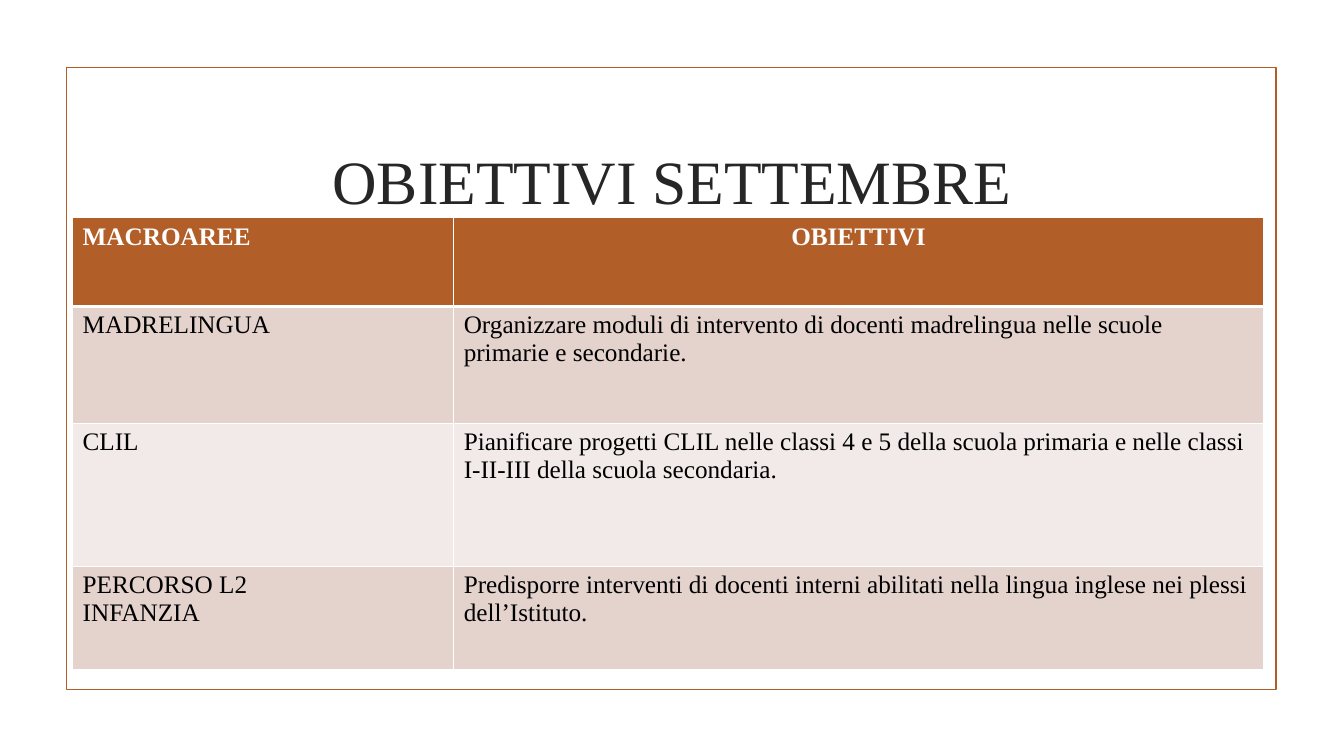
from lxml.etree import SubElement
from pptx import Presentation
from pptx.dml.color import RGBColor
from pptx.enum.shapes import MSO_SHAPE
from pptx.enum.text import MSO_ANCHOR, MSO_AUTO_SIZE, PP_ALIGN
from pptx.oxml.ns import qn
from pptx.util import Inches, Pt

COLOURS = {
    "accent": "B15E28",
    "title": "262626",
    "white": "FFFFFF",
    "black": "000000",
    "dark_band": "E4D2CD",
    "light_band": "F2EAE8",
}
FONT = "Times New Roman"
COLUMN_WIDTHS = [3.78, 8.03]
ROW_HEIGHTS = [0.88, 1.16, 1.42, 1.02]
ROWS = [
    ("MACROAREE", "OBIETTIVI"),
    ("MADRELINGUA",
     "Organizzare moduli di intervento di docenti madrelingua nelle scuole primarie e secondarie."),
    ("CLIL",
     "Pianificare progetti CLIL nelle classi 4 e 5 della scuola primaria e nelle classi "
     "I-II-III della scuola secondaria."),
    ("PERCORSO L2\nINFANZIA",
     "Predisporre interventi di docenti interni abilitati nella lingua inglese nei plessi dell’Istituto."),
]


def colour(name):
    """Return the named colour."""
    return RGBColor.from_string(COLOURS[name])


def format_text(frame, align, ink, **values):
    """Align every paragraph and apply the font values."""
    for para in frame.paragraphs:
        para.alignment = align
        para.font.color.rgb = colour(ink)
        for key, value in {"name": FONT, **values}.items():
            setattr(para.font, key, value)


def add_frame(page):
    """Draw the outline around the content."""
    frame = page.shapes.add_shape(
        MSO_SHAPE.RECTANGLE, Inches(0.66), Inches(0.67), Inches(12), Inches(6.17))
    frame.shadow.inherit = False
    frame.fill.background()
    frame.line.color.rgb = colour("accent")
    frame.line.width = Pt(1.25)


def set_title(page, text):
    """Place and format the slide title."""
    title = page.shapes.title
    place = {"left": 1.42, "top": 1.07, "width": 10.5, "height": 1.43}
    for key, value in place.items():
        setattr(title, key, Inches(value))
    frame = title.text_frame
    frame.text = text
    frame.word_wrap = True
    frame.auto_size = MSO_AUTO_SIZE.NONE
    frame.vertical_anchor = MSO_ANCHOR.MIDDLE
    format_text(frame, PP_ALIGN.CENTER, "title", size=Pt(44))


def set_borders(cell, widths):
    """Give the cell white borders of the given widths by side."""
    properties = cell._tc.get_or_add_tcPr()
    for side, width in widths.items():
        line = SubElement(properties, qn(f"a:ln{side}"), w=str(Pt(width)))
        fill = SubElement(line, qn("a:solidFill"))
        SubElement(fill, qn("a:srgbClr"), val=COLOURS["white"])


def format_cell(cell, row, column):
    """Style a cell by its row and column."""
    header = row == 0
    set_borders(cell, {"L": 1, "R": 1, "T": 3 if row == 1 else 1, "B": 3 if header else 1})
    band = "accent" if header else "dark_band" if row % 2 else "light_band"
    cell.fill.solid()
    cell.fill.fore_color.rgb = colour(band)
    align = PP_ALIGN.CENTER if header and column else PP_ALIGN.LEFT
    format_text(cell.text_frame, align, "white" if header else "black", size=Pt(18), bold=header)


def add_goals_table(page):
    """Add the table of areas and goals."""
    table = page.shapes.add_table(
        len(ROWS), len(COLUMN_WIDTHS), Inches(0.72), Inches(2.16),
        Inches(sum(COLUMN_WIDTHS)), Inches(sum(ROW_HEIGHTS))).table
    for column, width in zip(table.columns, COLUMN_WIDTHS):
        column.width = Inches(width)
    for row, (height, texts) in enumerate(zip(ROW_HEIGHTS, ROWS)):
        table.rows[row].height = Inches(height)
        for column, text in enumerate(texts):
            cell = table.cell(row, column)
            cell.text = text
            format_cell(cell, row, column)


def main():
    """Build and save the slide."""
    deck = Presentation()
    deck.slide_width = Inches(13.33)
    deck.slide_height = Inches(7.5)
    page = deck.slides.add_slide(deck.slide_layouts[5])
    add_frame(page)
    set_title(page, "OBIETTIVI SETTEMBRE")
    add_goals_table(page)
    deck.save("out.pptx")


if __name__ == "__main__":
    main()
